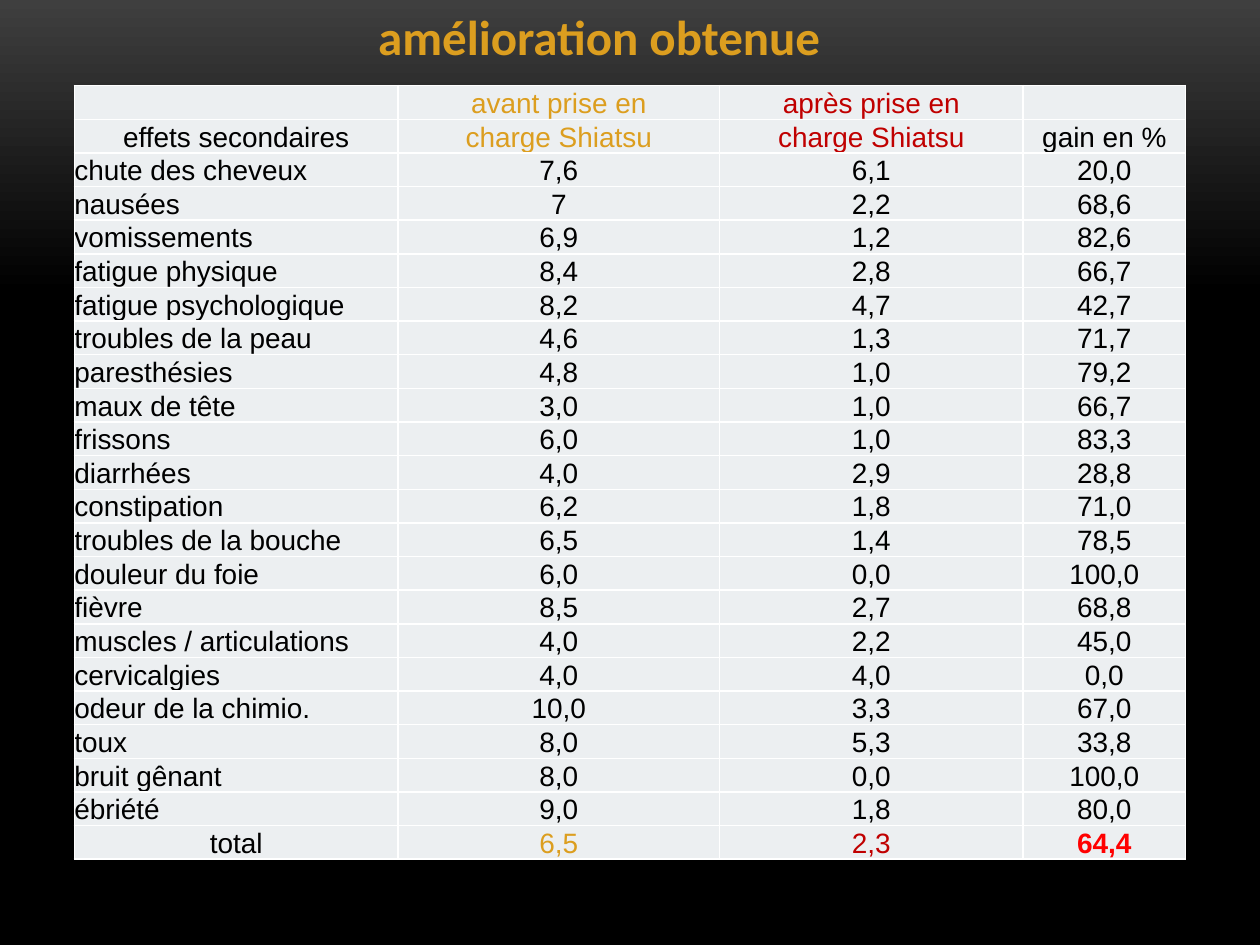
from lxml import etree
from pptx import Presentation
from pptx.dml.color import RGBColor
from pptx.enum.text import MSO_ANCHOR, PP_ALIGN
from pptx.oxml.ns import qn
from pptx.util import Inches, Pt

LEFT, CENTER = PP_ALIGN.LEFT, PP_ALIGN.CENTER
BOTTOM = MSO_ANCHOR.BOTTOM
GOLD = RGBColor(0xDC, 0x9E, 0x1F)
CRIMSON = RGBColor(0xC0, 0x00, 0x00)
RED = RGBColor(0xFF, 0x00, 0x00)
BLACK = RGBColor(0x00, 0x00, 0x00)
GREY = RGBColor(0x3F, 0x3F, 0x3F)
PALE = RGBColor(0xEC, 0xEF, 0xF1)
WHITE = RGBColor(0xFF, 0xFF, 0xFF)

TITLE = "amélioration obtenue"
HEADS = [
    ("", "avant prise en", "après prise en", ""),
    ("effets secondaires", "charge Shiatsu", "charge Shiatsu", "gain en %"),
]
EFFECTS = [
    ("chute des cheveux", "7,6", "6,1", "20,0"),
    ("nausées", "7", "2,2", "68,6"),
    ("vomissements", "6,9", "1,2", "82,6"),
    ("fatigue physique", "8,4", "2,8", "66,7"),
    ("fatigue psychologique", "8,2", "4,7", "42,7"),
    ("troubles de la peau", "4,6", "1,3", "71,7"),
    ("paresthésies", "4,8", "1,0", "79,2"),
    ("maux de tête", "3,0", "1,0", "66,7"),
    ("frissons", "6,0", "1,0", "83,3"),
    ("diarrhées", "4,0", "2,9", "28,8"),
    ("constipation", "6,2", "1,8", "71,0"),
    ("troubles de la bouche", "6,5", "1,4", "78,5"),
    ("douleur du foie", "6,0", "0,0", "100,0"),
    ("fièvre", "8,5", "2,7", "68,8"),
    ("muscles / articulations", "4,0", "2,2", "45,0"),
    ("cervicalgies", "4,0", "4,0", "0,0"),
    ("odeur de la chimio.", "10,0", "3,3", "67,0"),
    ("toux", "8,0", "5,3", "33,8"),
    ("bruit gênant", "8,0", "0,0", "100,0"),
    ("ébriété", "9,0", "1,8", "80,0"),
]
TOTAL = ("total", "6,5", "2,3", "64,4")

HEAD_INKS = (BLACK, GOLD, CRIMSON, BLACK)
BODY_INKS = (BLACK,) * 4
TOTAL_INKS = (BLACK, GOLD, CRIMSON, RED)
COLS = (2.57, 2.55, 2.41, 1.29)
TABLE_TOP, TABLE_LEFT, TABLE_HIGH = 0.68, 0.59, 6.13


def style(font, name, size, ink, bold=False):
    font.name, font.size, font.bold = name, Pt(size), bold
    font.color.rgb = ink


def rule(cell):
    """Draw a thin white border on all four sides of a cell."""
    props = cell._tc.get_or_add_tcPr()
    for spot, side in enumerate(("a:lnL", "a:lnR", "a:lnT", "a:lnB")):
        line = etree.Element(qn(side), w=str(Pt(1)))
        fill = etree.SubElement(line, qn("a:solidFill"))
        etree.SubElement(fill, qn("a:srgbClr"), val=str(WHITE))
        props.insert(spot, line)


def fill_cell(cell, text, ink, align, bold):
    cell.fill.solid()
    cell.fill.fore_color.rgb = PALE
    rule(cell)
    cell.margin_left = cell.margin_right = 0
    cell.margin_top = cell.margin_bottom = 0
    cell.vertical_anchor = BOTTOM
    para = cell.text_frame.paragraphs[0]
    para.text = text
    para.alignment = align
    # An empty cell takes its height from the paragraph's end mark.
    if not text:
        etree.SubElement(para._p, qn("a:endParaRPr"), sz="1600")
    for run in para.runs:
        style(run.font, "Arial", 16, ink, bold)


def add_back(slide):
    fill = slide.background.fill
    fill.gradient()
    fill.gradient_angle = 270
    for stop, ink, place in zip(fill.gradient_stops, (GREY, BLACK), (0, 0.31)):
        stop.color.rgb = ink
        stop.position = place


def add_title(slide):
    box = slide.shapes.add_textbox(Inches(0.67), 0, Inches(8.17), Inches(1.03))
    frame = box.text_frame
    frame.word_wrap = True
    frame.text = TITLE
    para = frame.paragraphs[0]
    para.alignment = CENTER
    style(para.runs[0].font, "Calibri", 28, GOLD, True)


def add_scores(slide):
    rows = [(row, HEAD_INKS) for row in HEADS]
    rows += [(row, BODY_INKS) for row in EFFECTS]
    rows.append((TOTAL, TOTAL_INKS))
    table = slide.shapes.add_table(
        len(rows), len(COLS), Inches(TABLE_LEFT), Inches(TABLE_TOP),
        Inches(sum(COLS)), Inches(TABLE_HIGH)).table
    table.first_row = table.horz_banding = False
    for col, width in zip(table.columns, COLS):
        col.width = Inches(width)
    for r, (row, inks) in enumerate(rows):
        table.rows[r].height = Inches(TABLE_HIGH / len(rows))
        for c, (text, ink) in enumerate(zip(row, inks)):
            align = LEFT if c == 0 and inks is BODY_INKS else CENTER
            fill_cell(table.cell(r, c), text, ink, align, ink == RED)


def main():
    deck = Presentation()
    deck.slide_width, deck.slide_height = Inches(10), Inches(7.5)
    slide = deck.slides.add_slide(deck.slide_layouts[6])
    add_back(slide)
    add_title(slide)
    add_scores(slide)
    deck.save("out.pptx")


if __name__ == "__main__":
    main()
